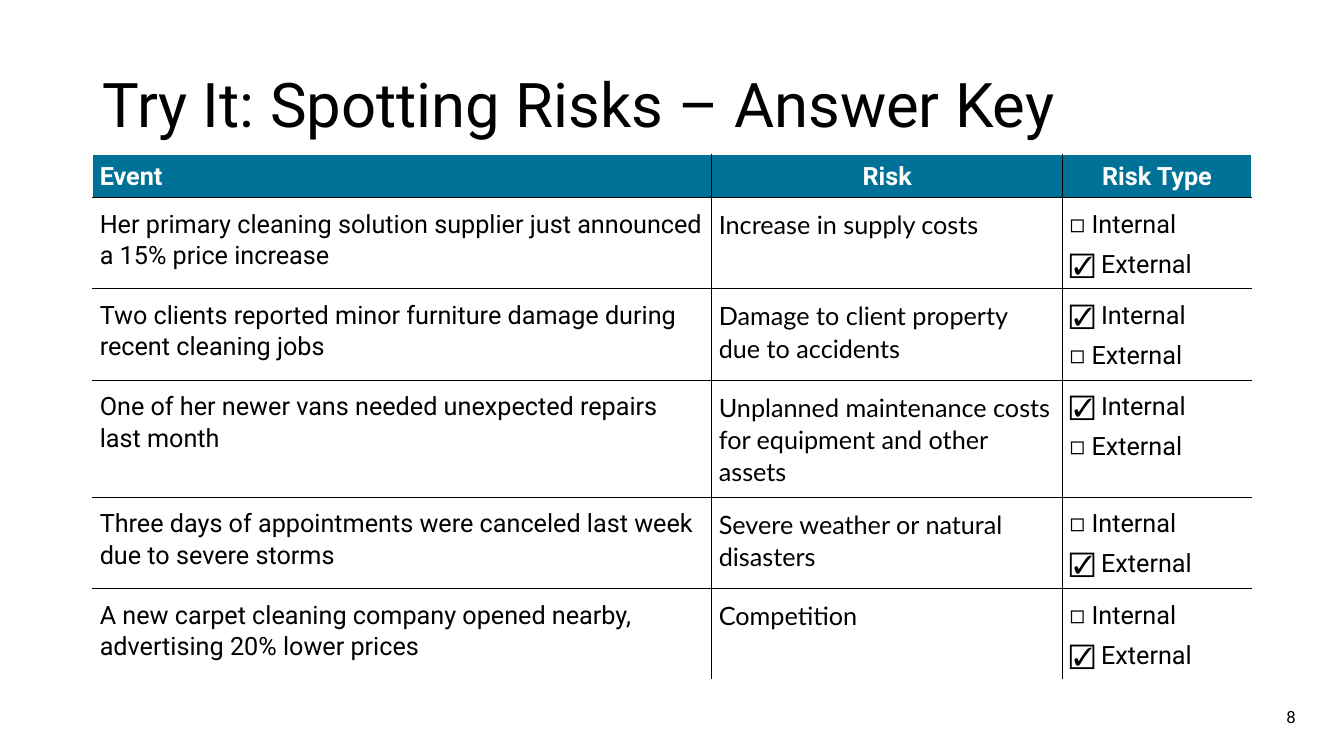
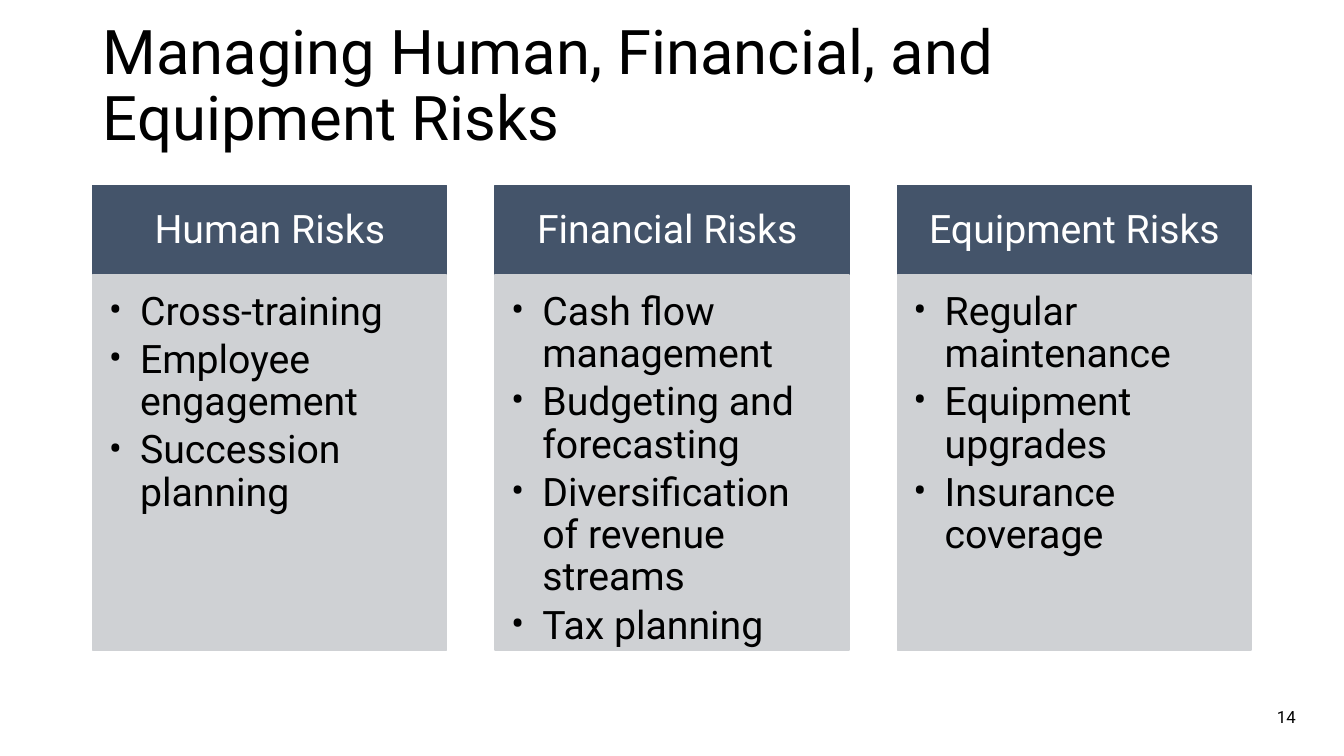
import pptx
import pptx.util
import pptx.dml.color
import pptx.enum.shapes
import pptx.enum.text
import pptx.oxml.ns
import lxml.etree

Inches = pptx.util.Inches
Pt = pptx.util.Pt
RGB = pptx.dml.color.RGBColor.from_string
ALIGN = pptx.enum.text.PP_ALIGN
ANCHOR = pptx.enum.text.MSO_ANCHOR
qn = pptx.oxml.ns.qn

THEME = {
    "black": "000000",
    "white": "FFFFFF",
    "teal": "007298",
    "slate": "44546A",
    "gray": "CFD1D4",
    "title": {"size": Pt(44), "name": "Roboto"},
    "card": {"size": Pt(28), "name": "Roboto"},
    "head": {"size": Pt(18), "name": "Roboto", "bold": True},
    "cell": {"size": Pt(18), "name": "Roboto", "bold": False},
    "answer": {"size": Pt(18), "name": "Lato", "bold": False},
    "number": {"size": Pt(12), "name": "Roboto"},
}


def write(tf, lines, style, color, fmt, bullet=False, gap=0):
    for i, line in enumerate(lines):
        p = tf.paragraphs[0] if i == 0 else tf.add_paragraph()
        if bullet:
            pPr = p._p.get_or_add_pPr()
            pPr.set("marL", str(Inches(0.31)))
            pPr.set("indent", str(-Inches(0.31)))
            lxml.etree.SubElement(pPr, qn("a:buFont")).set("typeface", THEME[style]["name"])
            lxml.etree.SubElement(pPr, qn("a:buChar")).set("char", "•")
        for key, value in fmt.items():
            setattr(p, key, value)
        if i and gap:
            p.space_before = Pt(gap)
        r = p.add_run()
        r.text = line
        for key, value in THEME[style].items():
            setattr(r.font, key, value)
        r.font.color.rgb = RGB(THEME[color])


def set_frame(target, anchor, left, top, right, bottom):
    frame = {
        "vertical_anchor": anchor,
        "margin_left": Inches(left),
        "margin_top": Inches(top),
        "margin_right": Inches(right),
        "margin_bottom": Inches(bottom),
        "word_wrap": True,
    }
    for key, value in frame.items():
        if hasattr(target, key):
            setattr(target, key, value)


prs = pptx.Presentation()
prs.slide_width, prs.slide_height = Inches(13.33), Inches(7.5)
left, width = 0.92, 11.49

slides = []
for title, top, height, number in [
    ("Try It: Spotting Risks – Answer Key", 0, 1.45, "8"),
    ("Managing Human, Financial, and Equipment Risks", 0.01, 1.57, "14"),
]:
    s = prs.slides.add_slide(prs.slide_layouts[6])
    slides.append(s)
    for box, text, style, anchor, fmt in [
        ((left, top, width, height), title, "title", ANCHOR.BOTTOM, {"line_spacing": 0.9}),
        ((9.95, 6.91, 3, 0.4), number, "number", ANCHOR.MIDDLE, {"alignment": ALIGN.RIGHT}),
    ]:
        tf = s.shapes.add_textbox(*map(Inches, box)).text_frame
        set_frame(tf, anchor, 0.1, 0.05, 0.1, 0.05)
        write(tf, [text], style, "black", fmt)

events = [
    ("Her primary cleaning solution supplier just announced a 15% price increase",
     "Increase in supply costs", "External"),
    ("Two clients reported minor furniture damage during recent cleaning jobs",
     "Damage to client property due to accidents", "Internal"),
    ("One of her newer vans needed unexpected repairs last month",
     "Unplanned maintenance costs for equipment and other assets", "Internal"),
    ("Three days of appointments were canceled last week due to severe storms",
     "Severe weather or natural disasters", "External"),
    ("A new carpet cleaning company opened nearby, advertising 20% lower prices",
     "Competition", "External"),
]
rows = [[["Event"], ["Risk"], ["Risk Type"]]]
for event, risk, answer in events:
    choices = [("☑ " if kind == answer else "◻ ") + kind for kind in ("Internal", "External")]
    rows.append([[event], [risk], choices])

col_widths = [6.14, 3.48, 1.87]
row_heights = [0.43] + [0.89] * len(events)
last_row, last_col = len(row_heights) - 1, len(col_widths) - 1
tbl = slides[0].shapes.add_table(
    len(row_heights), len(col_widths), Inches(left), Inches(1.53),
    Inches(width), Inches(sum(row_heights))).table
tbl.horz_banding = False
for col, w in zip(tbl.columns, col_widths):
    col.width = Inches(w)
for row, h in zip(tbl.rows, row_heights):
    row.height = Inches(h)

for i, row in enumerate(rows):
    for j, lines in enumerate(row):
        cell = tbl.cell(i, j)
        edges = {"lnL": j == 0, "lnR": j == last_col, "lnT": i == 0, "lnB": i == last_row}
        tcPr = cell._tc.get_or_add_tcPr()
        for tag, outer in edges.items():
            ln = lxml.etree.SubElement(tcPr, qn("a:" + tag), w=str(Pt(1)))
            fill = lxml.etree.SubElement(ln, qn("a:solidFill"))
            lxml.etree.SubElement(fill, qn("a:srgbClr"), val=THEME["white" if outer else "black"])
        fmt = {"line_spacing": 1.07, "space_after": Pt(4)}
        if i == 0:
            cell.fill.solid()
            cell.fill.fore_color.rgb = RGB(THEME["teal"])
            set_frame(cell, ANCHOR.MIDDLE, 0.07, 0, 0.07, 0)
            fmt["alignment"] = ALIGN.CENTER if j else ALIGN.LEFT
            write(cell.text_frame, lines, "head", "white", fmt)
        else:
            cell.fill.background()
            set_frame(cell, ANCHOR.TOP, 0.07, 0.1, 0.09, 0.08 if j == last_col else 0.1)
            write(cell.text_frame, lines, "answer" if j == 1 else "cell", "black", fmt, gap=2)

cards = [
    ("Human Risks", ["Cross-training", "Employee engagement", "Succession planning"]),
    ("Financial Risks ", ["Cash flow management", "Budgeting and forecasting",
                          "Diversification of revenue streams", "Tax planning"]),
    ("Equipment Risks", ["Regular maintenance", "Equipment upgrades", "Insurance coverage"]),
]
card_w, head_top, head_h, body_h = 3.51, 1.84, 0.89, 3.72
step = (width - card_w) / (len(cards) - 1)
for i, (heading, items) in enumerate(cards):
    for top, height, color in [(head_top, head_h, "slate"), (head_top + head_h, body_h, "gray")]:
        sp = slides[1].shapes.add_shape(
            pptx.enum.shapes.MSO_SHAPE.RECTANGLE,
            Inches(left + i * step), Inches(top), Inches(card_w), Inches(height))
        sp.shadow.inherit = False
        sp.fill.solid()
        sp.line.width = Pt(1)
        for paint in (sp.fill.fore_color, sp.line.color):
            paint.rgb = RGB(THEME[color])
        tf = sp.text_frame
        if color == "slate":
            set_frame(tf, ANCHOR.MIDDLE, 0.22, 0.12, 0.22, 0.12)
            write(tf, [heading], "card", "white", {"alignment": ALIGN.CENTER, "line_spacing": 0.9})
        else:
            set_frame(tf, ANCHOR.TOP, 0.16, 0.16, 0.22, 0.24)
            write(tf, items, "card", "black",
                  {"alignment": ALIGN.LEFT, "line_spacing": 0.9, "space_after": Pt(4.2)}, bullet=True)

prs.save("out.pptx")
